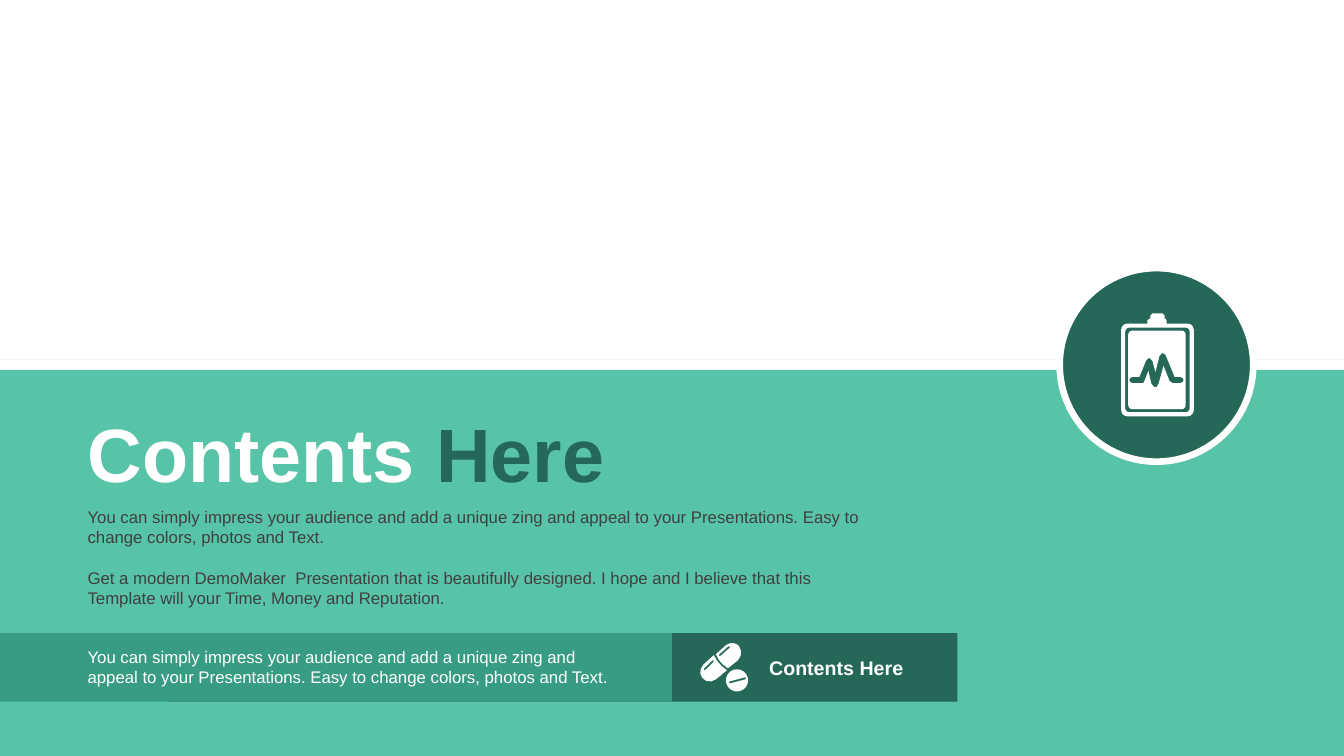
"""Build a contents slide with a green panel, a clipboard badge and a pill strip."""
from math import atan2, cos, pi, sin

from pptx import Presentation
from pptx.dml.color import RGBColor
from pptx.enum.shapes import MSO_SHAPE as SHAPE
from pptx.enum.text import MSO_AUTO_SIZE as AUTO
from pptx.util import Inches, Pt

W, H = 13.33, 7.5
COLORS = {"white": "FFFFFF", "mint": "57C3A7", "green": "389C82", "dark": "256857", "gray": "404040"}
FONT = "Arial"
MARGIN = 0.77
PANEL_TOP = 3.57
STRIP_TOP, STRIP_H = 6.28, 0.68
BADGE = (10.51, 2.66, 1.92, 1.92)

RECTS = [
    ("mint", 0, PANEL_TOP, W, H - PANEL_TOP),
    ("white", 0, PANEL_TOP, W, 0.1),
    ("dark", W / 8, STRIP_TOP, 7.83, STRIP_H),
    ("green", 0, STRIP_TOP, W / 2, STRIP_H),
]
IMPRESS = ("You can simply impress your audience and add a unique zing and appeal to your "
           "Presentations. Easy to change colors, photos and Text.")
MODERN = ("Get a modern DemoMaker  Presentation that is beautifully designed. I hope and I "
          "believe that this Template will your Time, Money and Reputation.")
TEXTS = [
    ((MARGIN, 4.98, 8.05, 1.11), 12, False, [[(IMPRESS, "gray")], [(MODERN, "gray")]]),
    ((MARGIN, 3.99, 6.5, 1.01), 54, True, [[("Contents ", "white"), ("Here", "dark")]]),
    ((MARGIN, 6.37, 5.59, 0.5), 12, False, [[(IMPRESS, "white")]]),
    ((7.53, 6.46, 1.97, 0.34), 14, True, [[("Contents Here", "white")]]),
]

CLIP = [(11.38, 3.21), (11.38, 3.18), (11.4, 3.16), (11.41, 3.16), (11.41, 3.13), (11.43, 3.11),
        (11.53, 3.11), (11.55, 3.13), (11.55, 3.16), (11.56, 3.16), (11.57, 3.18), (11.57, 3.21)]
PULSE = [(11.53, 3.5), (11.5, 3.53), (11.46, 3.69), (11.43, 3.58), (11.4, 3.55), (11.37, 3.57),
         (11.3, 3.74), (11.23, 3.74), (11.21, 3.75), (11.2, 3.77), (11.21, 3.79), (11.23, 3.8),
         (11.32, 3.8), (11.34, 3.8), (11.35, 3.78), (11.39, 3.68), (11.42, 3.81), (11.45, 3.84),
         (11.47, 3.84), (11.49, 3.81), (11.54, 3.63), (11.6, 3.78), (11.63, 3.8), (11.71, 3.8),
         (11.73, 3.79), (11.74, 3.77), (11.73, 3.75), (11.71, 3.74), (11.65, 3.74), (11.56, 3.52)]
LOWER_HALF = [(7.08, 6.5), (7.11, 6.56, 7.15, 6.61, 7.21, 6.65), (7.17, 6.68, 7.14, 6.71, 7.1, 6.74),
              (7.06, 6.77, 7, 6.77, 6.97, 6.73), (6.93, 6.69, 6.94, 6.63, 6.98, 6.59)]
UPPER_HALF = [(7.26, 6.38), (7.29, 6.38, 7.31, 6.39, 7.33, 6.41), (7.36, 6.45, 7.36, 6.51, 7.32, 6.55),
              (7.22, 6.63), (7.17, 6.6, 7.12, 6.55, 7.1, 6.49), (7.19, 6.41),
              (7.21, 6.39, 7.24, 6.38, 7.26, 6.38)]


def flatten(path, steps=3):
    points = []
    for item in path:
        if len(item) == 2:
            points.append(item)
            continue
        curve = [points[-1], item[:2], item[2:4], item[4:]]
        for i in range(1, steps + 1):
            t = i / steps
            weights = ((1 - t) ** 3, 3 * t * (1 - t) ** 2, 3 * t * t * (1 - t), t ** 3)
            points.append(tuple(sum(w * c[k] for w, c in zip(weights, curve)) for k in (0, 1)))
    return points


def arc(cx, cy, radius, start, sweep, steps):
    angles = [start + sweep * i / steps for i in range(steps + 1)]
    return [(cx + radius * cos(a), cy + radius * sin(a)) for a in angles]


def rounded(left, top, right, bottom, radius):
    x1, x2, y1, y2 = left + radius, right - radius, top + radius, bottom - radius
    corners = [(x2, y1), (x2, y2), (x1, y2), (x1, y1)]
    return [pt for i, (x, y) in enumerate(corners) for pt in arc(x, y, radius, (i - 1) * pi / 2, pi / 2, 3)]


def capsule(x1, y1, x2, y2, radius, steps=3):
    turn = atan2(y2 - y1, x2 - x1)
    return arc(x2, y2, radius, turn - pi / 2, pi, steps) + arc(x1, y1, radius, turn + pi / 2, pi, steps)


ICONS = [
    [capsule(7.24, 6.77, 7.39, 6.73, 0.01), capsule(7.31, 6.75, 7.31, 6.75, 0.11, 10),
     capsule(6.99, 6.64, 7.07, 6.56, 0.01), flatten(LOWER_HALF),
     capsule(7.14, 6.5, 7.23, 6.42, 0.01), flatten(UPPER_HALF)],
    [PULSE, rounded(11.19, 3.28, 11.76, 4.06, 0.04), rounded(11.16, 3.25, 11.8, 4.09, 0.04),
     rounded(11.12, 3.21, 11.84, 4.13, 0.06) + CLIP],
]


def rgb(name):
    return RGBColor.from_string(COLORS[name])


def paint(sp, color):
    sp.shadow.inherit = False
    sp.fill.solid()
    sp.fill.fore_color.rgb = rgb(color)
    sp.line.fill.background()


def add_preset(s, kind, box, color):
    sp = s.shapes.add_shape(kind, *map(Inches, box))
    paint(sp, color)
    return sp


def add_text(s, box, size, bold, paragraphs):
    tf = s.shapes.add_textbox(*map(Inches, box)).text_frame
    tf.word_wrap = True
    tf.auto_size = AUTO.SHAPE_TO_FIT_TEXT
    for i, runs in enumerate(paragraphs):
        p = tf.add_paragraph() if i else tf.paragraphs[0]
        p.space_before = Pt(size * 1.2 if i else 0)
        for text, color in runs:
            r = p.add_run()
            r.text = text
            r.font.name, r.font.size, r.font.bold = FONT, Pt(size), bold
            r.font.color.rgb = rgb(color)


def add_icon(s, contours):
    outlines = [[(Inches(x), Inches(y)) for x, y in contour] for contour in contours]
    builder = s.shapes.build_freeform(*outlines[0][0])
    for i, outline in enumerate(outlines):
        if i:
            builder.move_to(*outline[0])
        builder.add_line_segments(outline[1:], close=True)
    paint(builder.convert_to_shape(), "white")


def main():
    prs = Presentation()
    prs.slide_width, prs.slide_height = Inches(W), Inches(H)
    s = prs.slides.add_slide(prs.slide_layouts[6])
    for color, *box in RECTS:
        add_preset(s, SHAPE.RECTANGLE, box, color)
    badge = add_preset(s, SHAPE.OVAL, BADGE, "dark")
    badge.line.color.rgb = rgb("white")
    badge.line.width = Pt(4.75)
    for text in TEXTS:
        add_text(s, *text)
    for contours in ICONS:
        add_icon(s, contours)
    prs.save("out.pptx")


if __name__ == "__main__":
    main()
